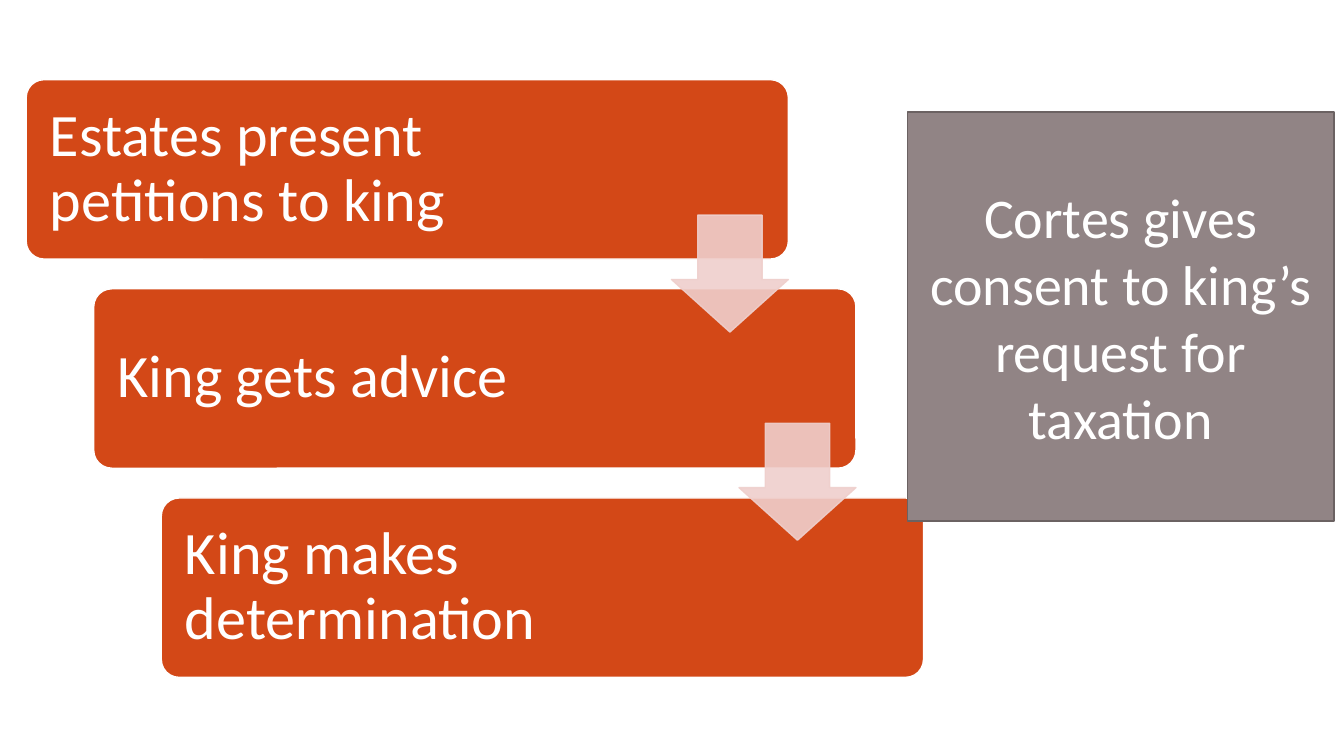
from lxml import etree
from pptx import Presentation
from pptx.dml.color import RGBColor
from pptx.enum.shapes import MSO_SHAPE as Kind
from pptx.enum.text import MSO_ANCHOR as Anchor, PP_ALIGN as Align
from pptx.oxml.ns import qn
from pptx.util import Inches, Pt

# Staircase grid: each step moves one column right and one row down
LEFT, TOP = 0.26, 0.79
COL, ROW = 0.67, 2.075
CARD_W, CARD_H = 7.56, 1.78
PAD = 0.055
ARROW = 1.16

STEPS = [
    "Estates present petitions to king",
    "King gets advice",
    "King makes determination",
]


def color(code):
    return RGBColor.from_string(code)


def fade(shape, share):
    """Set the opacity of fill and line."""
    for tint in shape._element.spPr.iter(qn("a:srgbClr")):
        etree.SubElement(tint, qn("a:alpha")).set("val", str(share * 1000))


def add_box(slide, kind, area, fill, line, adjust=()):
    shape = slide.shapes.add_shape(kind, *map(Inches, area))
    shape.shadow.inherit = False
    for i, value in enumerate(adjust):
        shape.adjustments[i] = value
    shape.fill.solid()
    shape.fill.fore_color.rgb = color(fill)
    shape.line.color.rgb = color(line)
    shape.line.width = Pt(1)
    return shape


def write(shape, text, size, frame, para):
    box = shape.text_frame
    box.text = text
    first = box.paragraphs[0]
    base = {"word_wrap": True, "vertical_anchor": Anchor.MIDDLE}
    font = {"name": "Calibri", "size": Pt(size)}
    for item, values in ((box, base | frame), (first, para), (first.runs[0].font, font)):
        for name, value in values.items():
            setattr(item, name, value)
    first.runs[0].font.color.rgb = color("FFFFFF")


def add_step(slide, n, text):
    x, y = LEFT + n * COL, TOP + n * ROW
    add_box(slide, Kind.ROUNDED_RECTANGLE, (x, y, CARD_W, CARD_H),
            "D34817", "FFFFFF", [0.1])
    area = (x + PAD, y + PAD, 5.63, CARD_H - 2 * PAD)
    label = slide.shapes.add_textbox(*map(Inches, area))
    sides = ("left", "right", "top", "bottom")
    frame = {f"margin_{side}": Inches(0.18) for side in sides}
    write(label, text, 43, frame, {"line_spacing": 0.9})


def add_arrow(slide, n):
    # Right edge meets the card edge; the arrow spans the gap below
    x = LEFT + n * COL + CARD_W - ARROW
    y = 2.135 + n * (ROW - 0.01)
    arrow = add_box(slide, Kind.DOWN_ARROW, (x, y, ARROW, ARROW),
                    "EFCFCC", "EFCFCC", [0.55, 0.45])
    fade(arrow, 90)


def main():
    deck = Presentation()
    deck.slide_width, deck.slide_height = Inches(13.33), Inches(7.5)
    slide = deck.slides.add_slide(deck.slide_layouts[6])

    # Steps of the petition, then the arrows between them
    for n, text in enumerate(STEPS):
        add_step(slide, n, text)
    for n in range(len(STEPS) - 1):
        add_arrow(slide, n)

    # Consent panel
    panel = add_box(slide, Kind.RECTANGLE, (9, 1.11, 4.23, 4.06), "918485", "6B6262")
    write(panel, "Cortes gives consent to king’s request for taxation", 40,
          {}, {"alignment": Align.CENTER})

    deck.save("out.pptx")


if __name__ == "__main__":
    main()
